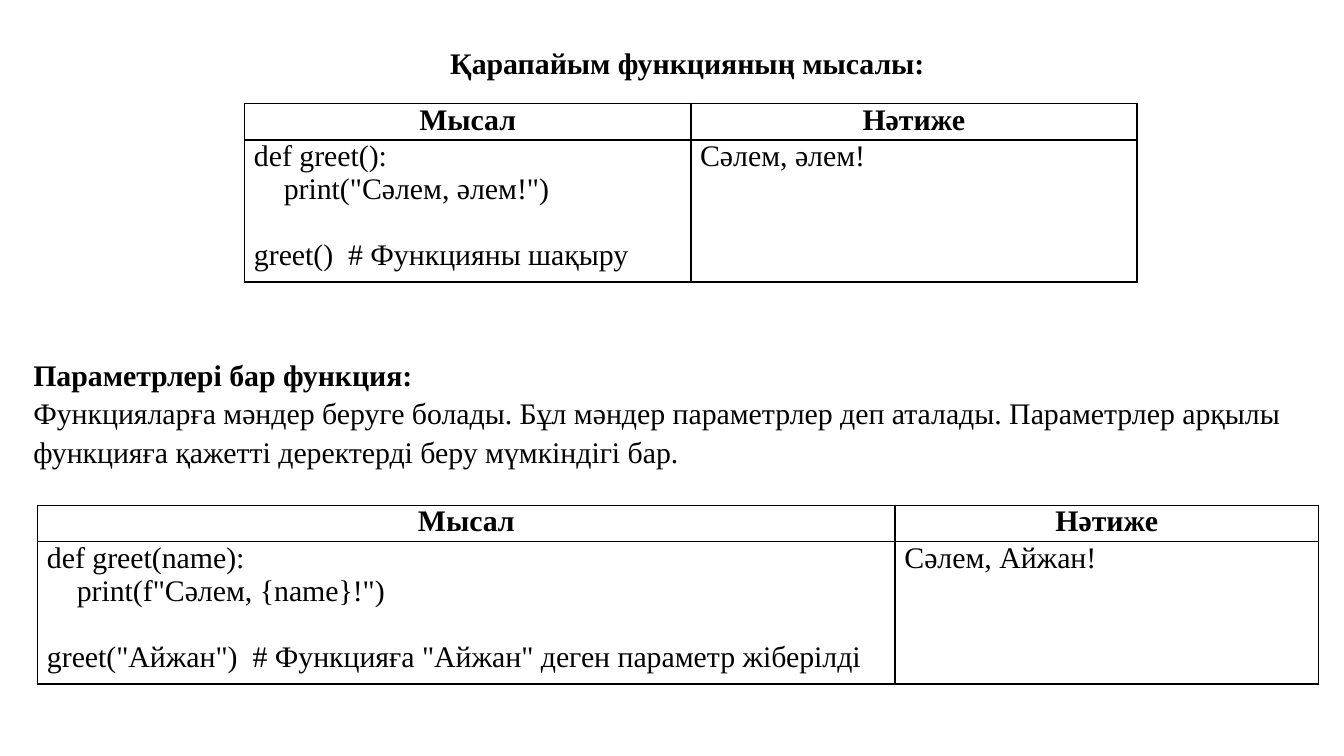
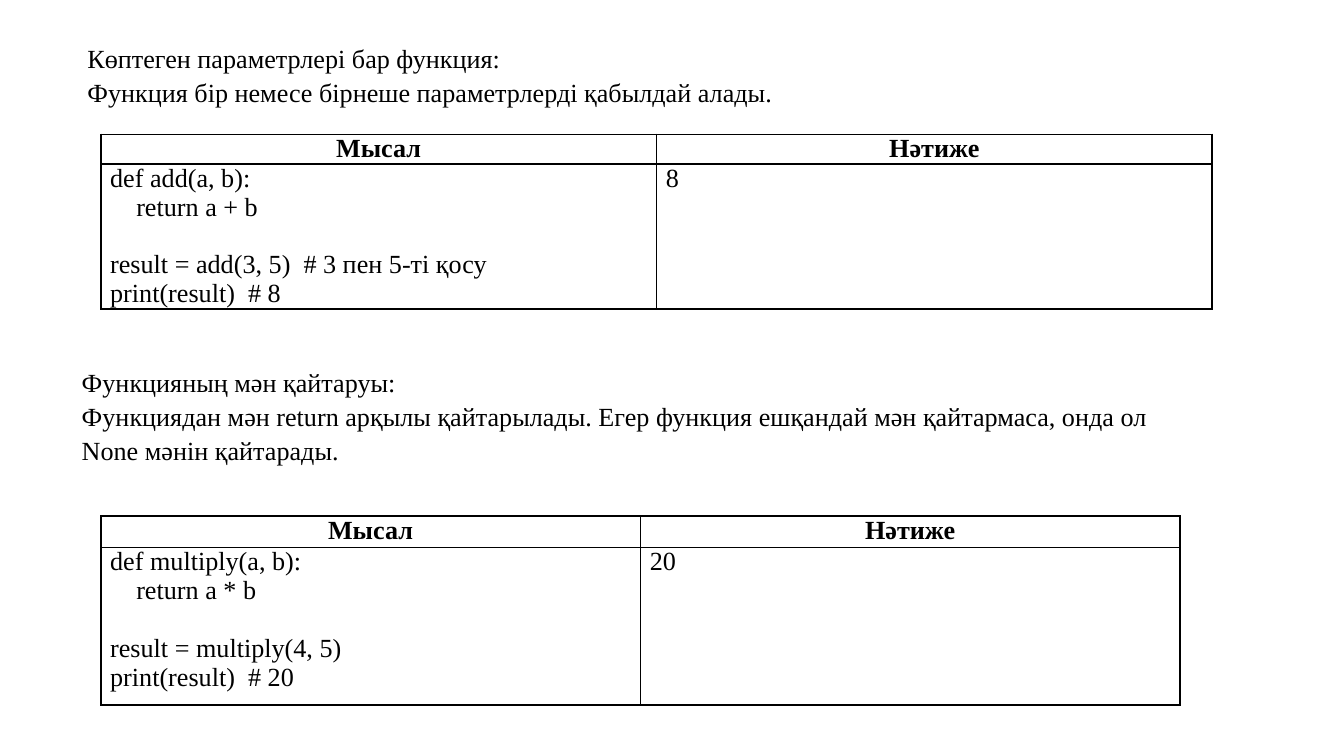
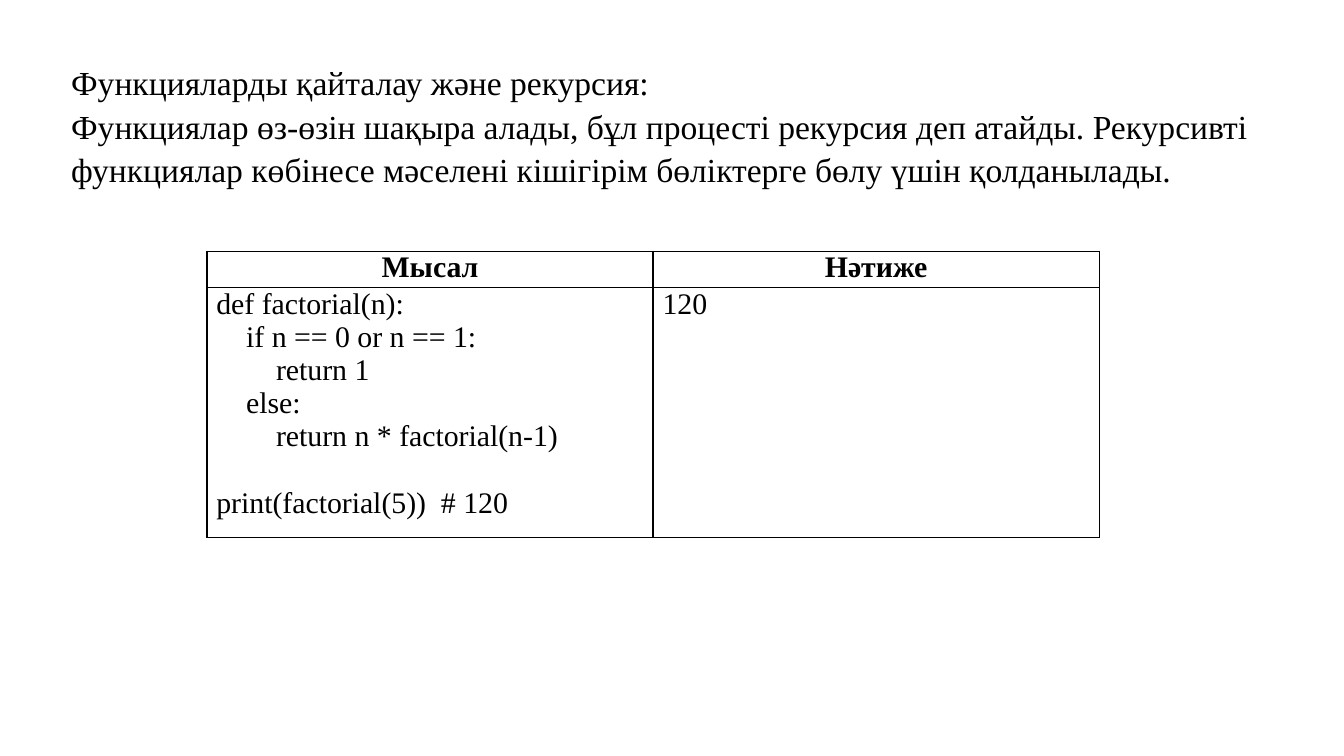
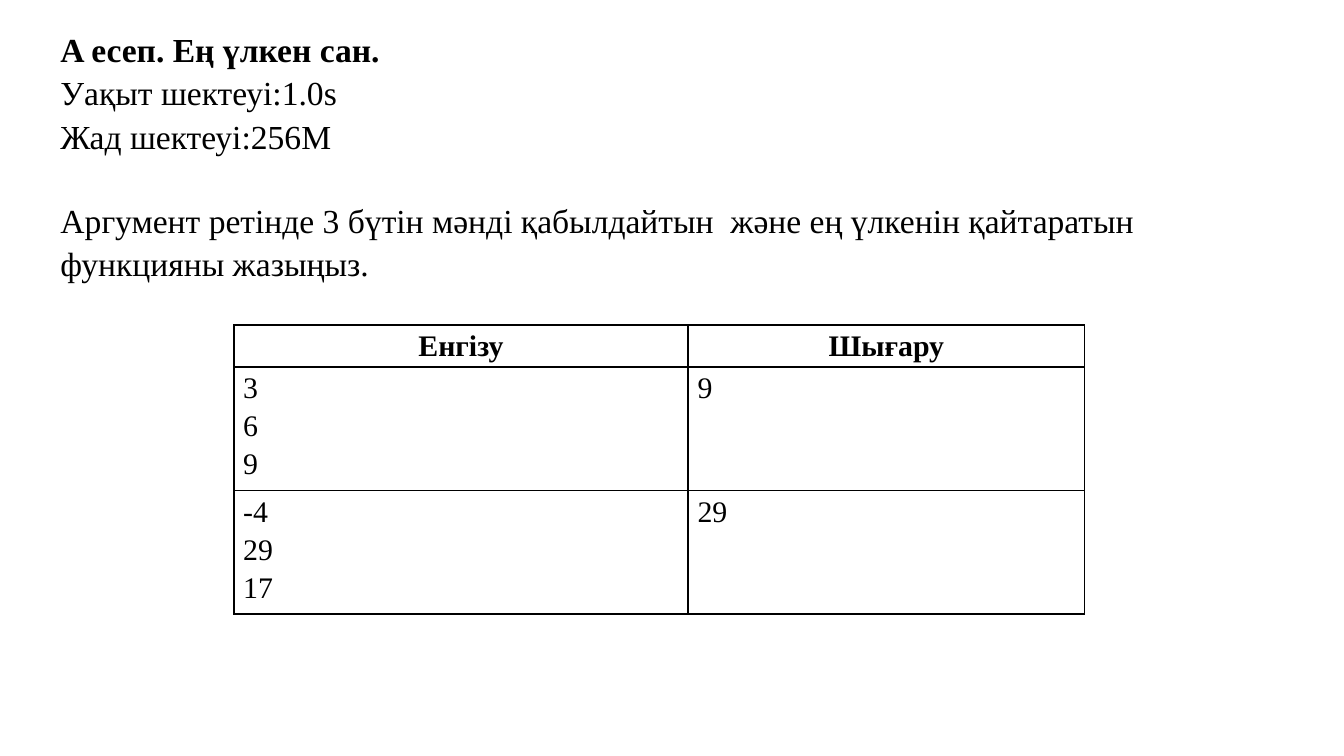
from dataclasses import dataclass

from lxml.etree import SubElement
from pptx import Presentation
from pptx.dml.color import RGBColor
from pptx.enum.text import MSO_ANCHOR as Anchor, PP_ALIGN as Align
from pptx.oxml.ns import qn
from pptx.util import Emu, Inches, Pt


@dataclass(frozen=True)
class Theme:
    font: str = "Times New Roman"
    ink: str = "000000"
    small: int = 14
    medium: int = 16
    large: int = 18
    border: int = 1
    text_spacing: float = 1.08
    line_height: float = 1.11
    code_indent: int = 4
    cell_margin: float = 0.07


T = Theme()
WIDTH, HEIGHT = Inches(10), Inches(5.625)
COLUMNS = 100
UNIT = WIDTH / COLUMNS
TITLE_ONLY = 5
HEADER = ("Мысал", "Нәтиже")


def grid(*cells):
    return [Emu(round(c * UNIT)) for c in cells]


def apply(obj, **values):
    for name, value in values.items():
        setattr(obj, name, value)


def write(tf, text, size, bold_lines=0, align=Align.LEFT, spacing=1.0):
    gap, first = 0, True
    for i, line in enumerate(text.split("\n")):
        if not line:
            gap += size * T.line_height * spacing
            continue
        p = tf.paragraphs[0] if first else tf.add_paragraph()
        apply(p, alignment=align, line_spacing=spacing,
              space_before=Pt(gap), space_after=Pt(0))
        content = line.lstrip(" ")
        level = (len(line) - len(content)) // T.code_indent
        if level:
            p_pr = p._p.get_or_add_pPr()
            p_pr.set("marL", str(Pt(level * size)))
            p_pr.set("indent", "0")
        r = p.add_run()
        r.text = content
        apply(r.font, name=T.font, size=Pt(size), bold=i < bold_lines)
        r.font.color.rgb = RGBColor.from_string(T.ink)
        gap, first = 0, False


def fill_text(sp, box, text, size, bold_lines=0, wrap=True):
    apply(sp, **dict(zip(("left", "top", "width", "height"), grid(*box))))
    tf = sp.text_frame
    apply(tf, word_wrap=wrap, vertical_anchor=Anchor.TOP)
    write(tf, text, size, bold_lines, spacing=T.text_spacing)


def add_title(s, box, text, size, **options):
    fill_text(s.shapes.title, box, text, size, **options)


def add_text(s, box, text, size, **options):
    fill_text(s.shapes.add_textbox(0, 0, 0, 0), box, text, size, **options)


def outline(cell):
    tc_pr = cell._tc.get_or_add_tcPr()
    for side in "LRTB":
        ln = SubElement(tc_pr, qn(f"a:ln{side}"), w=str(Pt(T.border)))
        fill = SubElement(ln, qn("a:solidFill"))
        SubElement(fill, qn("a:srgbClr"), val=T.ink)


def add_grid_table(s, corner, widths, heights, rows, size, spacing=1.0):
    frame = s.shapes.add_table(len(rows), len(widths),
                               *grid(*corner, sum(widths), sum(heights)))
    table = frame.table
    apply(table, first_row=False, horz_banding=False)
    for col, width in zip(table.columns, grid(*widths)):
        col.width = width
    for row, height in zip(table.rows, grid(*heights)):
        row.height = height
    for i, texts in enumerate(rows):
        for j, text in enumerate(texts):
            cell = table.cell(i, j)
            apply(cell, margin_left=Inches(T.cell_margin),
                  margin_right=Inches(T.cell_margin),
                  margin_top=0, margin_bottom=0, vertical_anchor=Anchor.TOP)
            outline(cell)
            cell.fill.background()
            write(cell.text_frame, text, size, bold_lines=int(i == 0),
                  align=Align.CENTER if i == 0 else Align.LEFT,
                  spacing=spacing)


def simple_functions(s):
    add_title(s, (32.5, 2.6, 37.8, 3.7), "Қарапайым функцияның мысалы:",
              T.medium, bold_lines=1, wrap=False)
    code = """def greet():
    print("Сәлем, әлем!")

greet()  # Функцияны шақыру"""
    add_grid_table(s, (18.2, 7.7), (33.2, 33.2), (2.7, 10.6),
                   [HEADER, (code, "Сәлем, әлем!")], T.medium)
    add_text(s, (1.5, 25.8, 96.6, 9.1),
             "Параметрлері бар функция:\n"
             "Функцияларға мәндер беруге болады. Бұл мәндер параметрлер "
             "деп аталады. Параметрлер арқылы функцияға қажетті деректерді "
             "беру мүмкіндігі бар.", T.medium, bold_lines=1)
    code = """def greet(name):
    print(f"Сәлем, {name}!")

greet("Айжан")  # Функцияға "Айжан" деген параметр жіберілді"""
    add_grid_table(s, (2.8, 37.6), (63.8, 31.5), (2.7, 10.6),
                   [HEADER, (code, "Сәлем, Айжан!")], T.medium)


def parameters_and_return(s):
    add_title(s, (5.5, 2.5, 53.4, 5.7),
              "Көптеген параметрлері бар функция:\n"
              "Функция бір немесе бірнеше параметрлерді қабылдай алады.",
              T.small, wrap=False)
    code = """def add(a, b):
    return a + b

result = add(3, 5)  # 3 пен 5-ті қосу
print(result)  # 8"""
    add_grid_table(s, (7.5, 10), (41.35, 41.35), (2.2, 10.8),
                   [HEADER, (code, "8")], T.small)
    add_text(s, (5.1, 26.6, 85, 8.1),
             "Функцияның мән қайтаруы:\n"
             "Функциядан мән return арқылы қайтарылады. Егер функция "
             "ешқандай мән қайтармаса, онда ол None мәнін қайтарады.",
             T.small)
    code = """def multiply(a, b):
    return a * b

result = multiply(4, 5)
print(result)  # 20"""
    add_grid_table(s, (7.5, 38.4), (40.15, 40.15), (2.3, 11.7),
                   [HEADER, (code, "20")], T.small)


def recursion(s):
    add_title(s, (4.3, 3.9, 91.3, 10.1),
              "Функцияларды қайталау және рекурсия:\n"
              "Функциялар өз-өзін шақыра алады, бұл процесті рекурсия деп "
              "атайды. Рекурсивті функциялар көбінесе мәселені кішігірім "
              "бөліктерге бөлу үшін қолданылады.", T.large)
    code = """def factorial(n):
    if n == 0 or n == 1:
        return 1
    else:
        return n * factorial(n-1)

print(factorial(5))  # 120"""
    add_grid_table(s, (15.4, 18.7), (33.2, 33.2), (2.7, 18.6),
                   [HEADER, (code, "120")], T.medium)


def largest_number_task(s):
    add_title(s, (3.5, 1.4, 93.7, 19.2),
              "A есеп. Ең үлкен сан.\n"
              "Уақыт шектеуі:1.0s\n"
              "Жад шектеуі:256M\n\n"
              "Аргумент ретінде 3 бүтін мәнді қабылдайтын  және ең үлкенін "
              "қайтаратын функцияны жазыңыз.", T.large, bold_lines=1)
    add_grid_table(s, (17.4, 24.2), (33.8, 29.5), (3.1, 9.2, 9.2),
                   [("Енгізу", "Шығару"),
                    ("3\n6\n9", "9"),
                    ("-4\n29\n17", "29")], T.medium, spacing=1.15)


def main():
    prs = Presentation()
    apply(prs, slide_width=WIDTH, slide_height=HEIGHT)
    for build in (simple_functions, parameters_and_return, recursion,
                  largest_number_task):
        build(prs.slides.add_slide(prs.slide_layouts[TITLE_ONLY]))
    prs.save("out.pptx")


if __name__ == "__main__":
    main()
